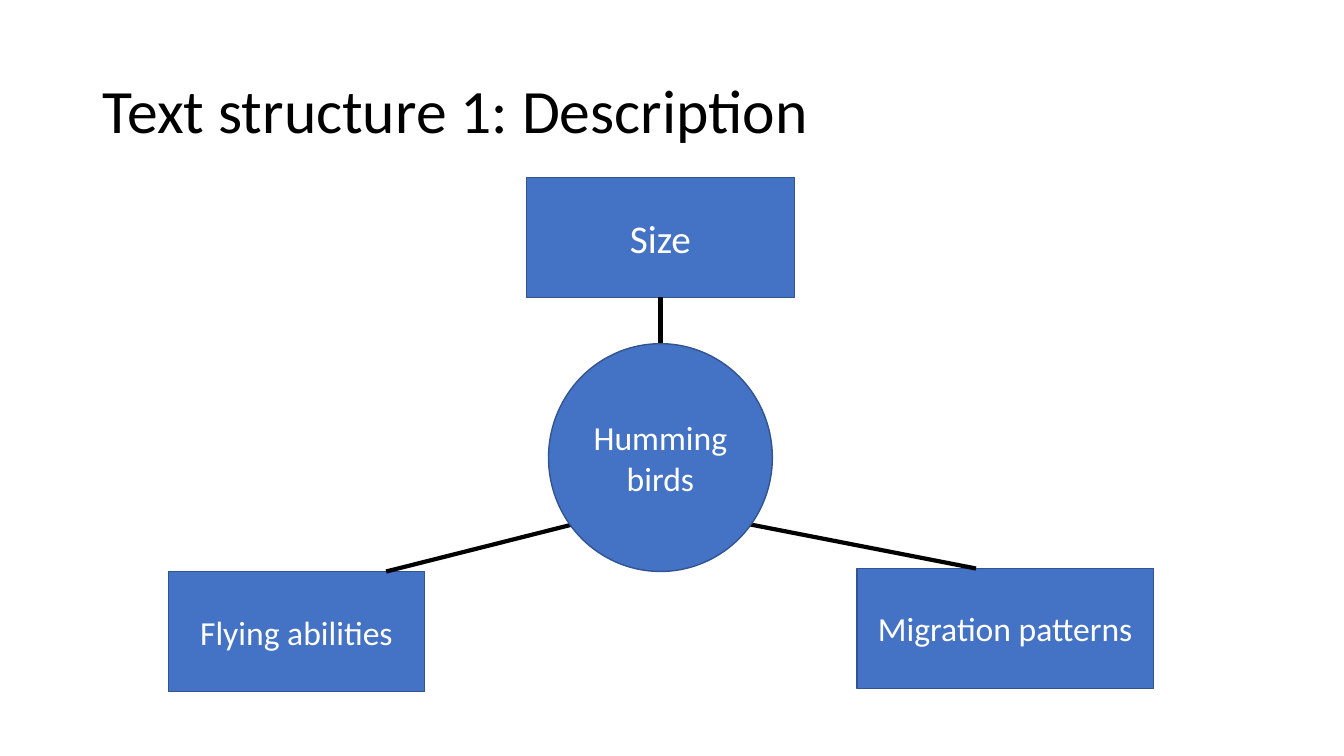
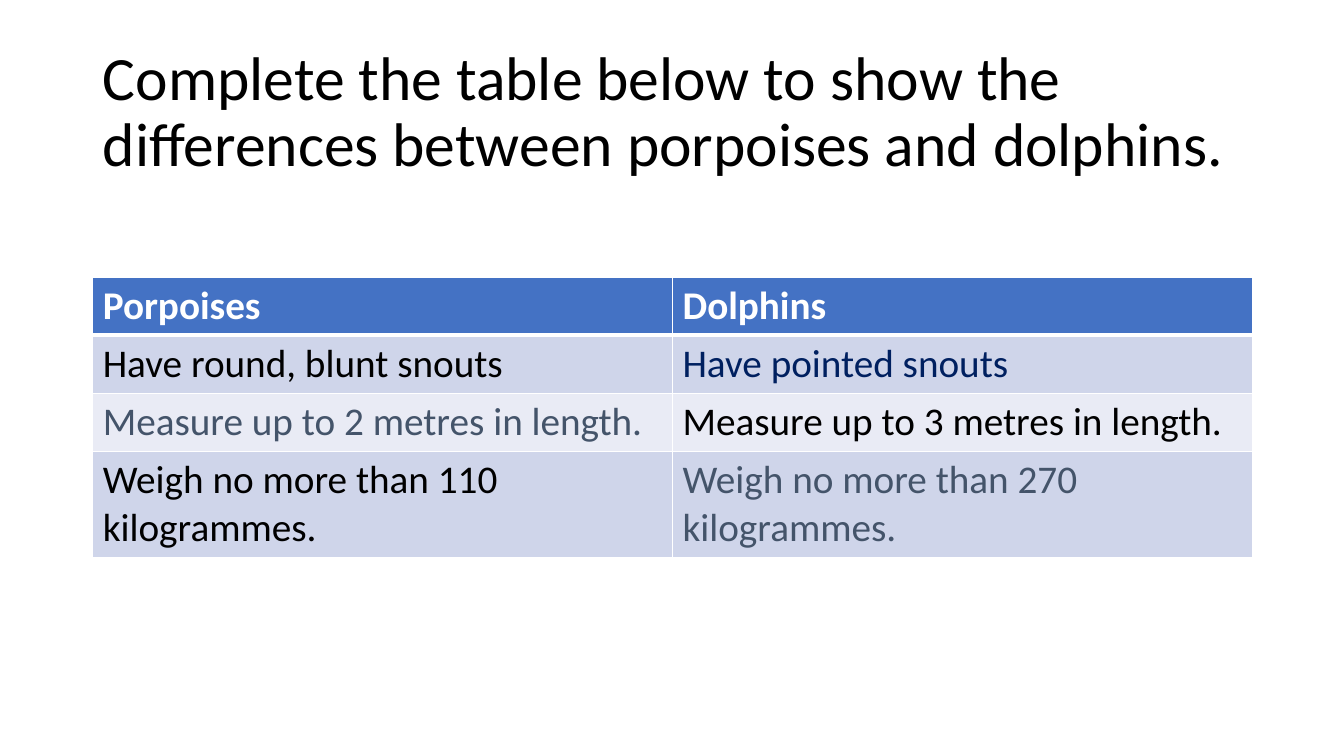
import pptx
import pptx.util
import pptx.dml.color
import pptx.enum.shapes
import pptx.enum.text
import pptx.oxml
import pptx.oxml.ns

Inches, Pt = pptx.util.Inches, pptx.util.Pt
SHAPE = pptx.enum.shapes.MSO_SHAPE
ANCHOR = pptx.enum.text.MSO_ANCHOR
ALIGN = pptx.enum.text.PP_ALIGN

# Shared style
FONT = "Calibri"
BLUE, EDGE, BLACK, WHITE = "4472C4", "325491", "000000", "FFFFFF"
NAVY, SLATE = "002060", "44546A"
BANDS = ["CFD5EA", "E9EBF5"]

# Content: label, kind, left, top, width, height, text size
NODES = [
    ("Migration patterns", SHAPE.RECTANGLE, 8.5, 5.64, 2.94, 1.19, 24),
    ("Flying abilities", SHAPE.RECTANGLE, 1.67, 5.67, 2.54, 1.19, 24),
    ("Size", SHAPE.RECTANGLE, 5.22, 1.76, 2.66, 1.19, 28),
]
HUB = ("Hummingbirds", SHAPE.OVAL, 5.44, 3.41, 2.22, 2.26, 24)
# Start x, y, end x, y, and the box whose bottom the start joins
LINKS = [
    (9.68, 5.64, 7.22, 5.16, None),
    (3.83, 5.67, 5.85, 5.16, None),
    (6.55, 2.95, 6.55, 3.41, "Size"),
]
HEADS = ["Porpoises", "Dolphins"]
FACTS = [
    [("Have round, blunt snouts", BLACK), ("Have pointed snouts", NAVY)],
    [("Measure up to 2 metres in length.", SLATE),
     ("Measure up to 3 metres in length.", BLACK)],
    [("Weigh no more than 110 kilogrammes.", BLACK),
     ("Weigh no more than 270 kilogrammes.", SLATE)],
]
ROWS = [0.57, 0.57, 0.57, 1.05]


def rgb(code):
    return pptx.dml.color.RGBColor.from_string(code)


def paint(part, code):
    part.fill.solid()
    part.fill.fore_color.rgb = rgb(code)


def write(frame, text, size, color, align=ALIGN.LEFT, bold=False):
    frame.word_wrap = True
    para = frame.paragraphs[0]
    para.text = text
    para.alignment = align
    font = para.font
    font.name, font.size, font.bold = FONT, Pt(size), bold
    font.color.rgb = rgb(color)
    return para


def add_slide(deck, text):
    slide = deck.slides.add_slide(deck.slide_layouts[5])
    title = slide.shapes.title
    title.left, title.top = Inches(0.92), Inches(0.4)
    title.width, title.height = Inches(11.5), Inches(1.45)
    frame = title.text_frame
    frame.vertical_anchor = ANCHOR.MIDDLE
    frame.auto_size = pptx.enum.text.MSO_AUTO_SIZE.NONE
    write(frame, text, 44, BLACK).line_spacing = 0.9
    return slide


def add_node(slide, label, kind, left, top, width, height, size):
    node = slide.shapes.add_shape(
        kind, Inches(left), Inches(top), Inches(width), Inches(height))
    node.shadow.inherit = False
    paint(node, BLUE)
    node.line.color.rgb = rgb(EDGE)
    node.line.width = Pt(1)
    node.text_frame.vertical_anchor = ANCHOR.MIDDLE
    write(node.text_frame, label, size, WHITE, ALIGN.CENTER)
    return node


def add_link(slide, ends, box):
    link = slide.shapes.add_connector(
        pptx.enum.shapes.MSO_CONNECTOR.STRAIGHT, *map(Inches, ends))
    link.line.color.rgb = rgb(BLACK)
    link.line.width = Pt(3)
    link._element.spPr.append(pptx.oxml.parse_xml(
        f'<a:effectLst {pptx.oxml.ns.nsdecls("a")}/>'))
    if box is not None:
        link.begin_connect(box, 2)


def add_edges(cell, row):
    thick = {"T": 3 if row == 1 else 1, "B": 3 if row == 0 else 1}
    props = cell._tc.get_or_add_tcPr()
    for pos, side in enumerate("LRTB"):
        width = Pt(thick.get(side, 1))
        props.insert(pos, pptx.oxml.parse_xml(
            f'<a:ln{side} {pptx.oxml.ns.nsdecls("a")} w="{width}"><a:solidFill>'
            f'<a:srgbClr val="{WHITE}"/></a:solidFill></a:ln{side}>'))


def add_web(deck):
    slide = add_slide(deck, "Text structure 1: Description")
    boxes = {node[0]: add_node(slide, *node) for node in NODES}
    for *ends, name in LINKS:
        add_link(slide, ends, boxes.get(name))
    add_node(slide, *HUB)


def add_grid(deck):
    slide = add_slide(deck, "Complete the table below to show the "
                            "differences between porpoises and dolphins.")
    cells = [[(head, WHITE) for head in HEADS]] + FACTS
    table = slide.shapes.add_table(
        len(cells), len(HEADS), Inches(0.92), Inches(2.75),
        Inches(11.5), Inches(sum(ROWS))).table
    for row, line in enumerate(cells):
        table.rows[row].height = Inches(ROWS[row])
        for col, (text, color) in enumerate(line):
            cell = table.cell(row, col)
            paint(cell, BANDS[(row - 1) % 2] if row else BLUE)
            write(cell.text_frame, text, 28, color, bold=row == 0)
            add_edges(cell, row)


def main():
    deck = pptx.Presentation()
    deck.slide_width, deck.slide_height = Inches(13.33), Inches(7.5)
    add_web(deck)
    add_grid(deck)
    deck.save("out.pptx")


if __name__ == "__main__":
    main()
